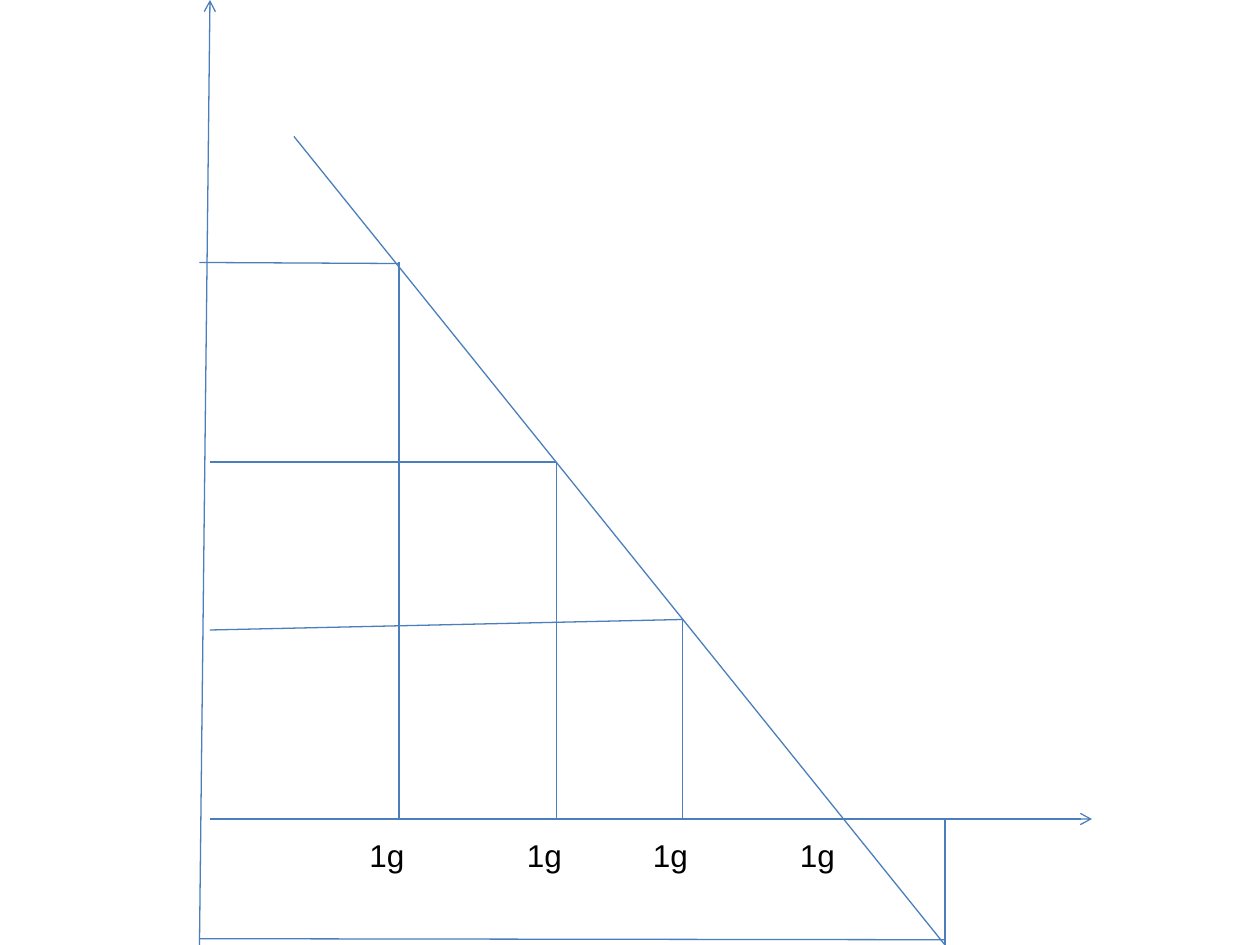
from lxml import etree
from pptx import Presentation
from pptx import util as u
from pptx.dml import color
from pptx.enum import shapes, text
from pptx.oxml import ns

COLORS = {"line": "4B7EBC", "text": "000000"}
COLUMNS, ROWS = 120, 90

presentation = Presentation()
presentation.slide_width = u.Inches(10)
presentation.slide_height = u.Inches(7.5)
slide = presentation.slides.add_slide(presentation.slide_layouts[6])
column = presentation.slide_width / COLUMNS
row = presentation.slide_height / ROWS


def draw_line(x1, y1, x2, y2, arrow=False):
    connector = slide.shapes.add_connector(
        shapes.MSO_CONNECTOR.STRAIGHT,
        round(x1 * column), round(y1 * row), round(x2 * column), round(y2 * row))
    connector.line.color.rgb = color.RGBColor.from_string(COLORS["line"])
    connector.line.width = u.Pt(0.75)
    properties = connector._element.spPr
    if arrow:
        etree.SubElement(properties.find(ns.qn("a:ln")), ns.qn("a:tailEnd"), type="arrow")
    etree.SubElement(properties, ns.qn("a:effectLst"))


axis_x, axis_y, edge_x = 20, 78, 19
draw_line(axis_x, axis_y, 104, axis_y, arrow=True)
draw_line(edge_x, ROWS, axis_x, 0, arrow=True)
draw_line(28, 13, 90, ROWS)

drops = [(38, axis_y, 25), (53, axis_y, 44), (65, axis_y, 59), (90, ROWS, axis_y)]
for x, start, end in drops:
    draw_line(x, start, x, end)

levels = [(38, 25.1, edge_x, 25), (53, 44, axis_x, 44),
          (65, 59, axis_x, 60), (90, 89.5, edge_x, 89.4)]
for level in levels:
    draw_line(*level)

for label_column in (34, 49, 61, 75):
    label = slide.shapes.add_textbox(
        round(label_column * column), round(79 * row), round(6 * column), round(4.8 * row))
    frame = label.text_frame
    frame.word_wrap = True
    frame.auto_size = text.MSO_AUTO_SIZE.SHAPE_TO_FIT_TEXT
    frame.text = "1g"
    font = frame.paragraphs[0].runs[0].font
    font.name = "Arial"
    font.size = u.Pt(18)
    font.color.rgb = color.RGBColor.from_string(COLORS["text"])

presentation.save("out.pptx")
